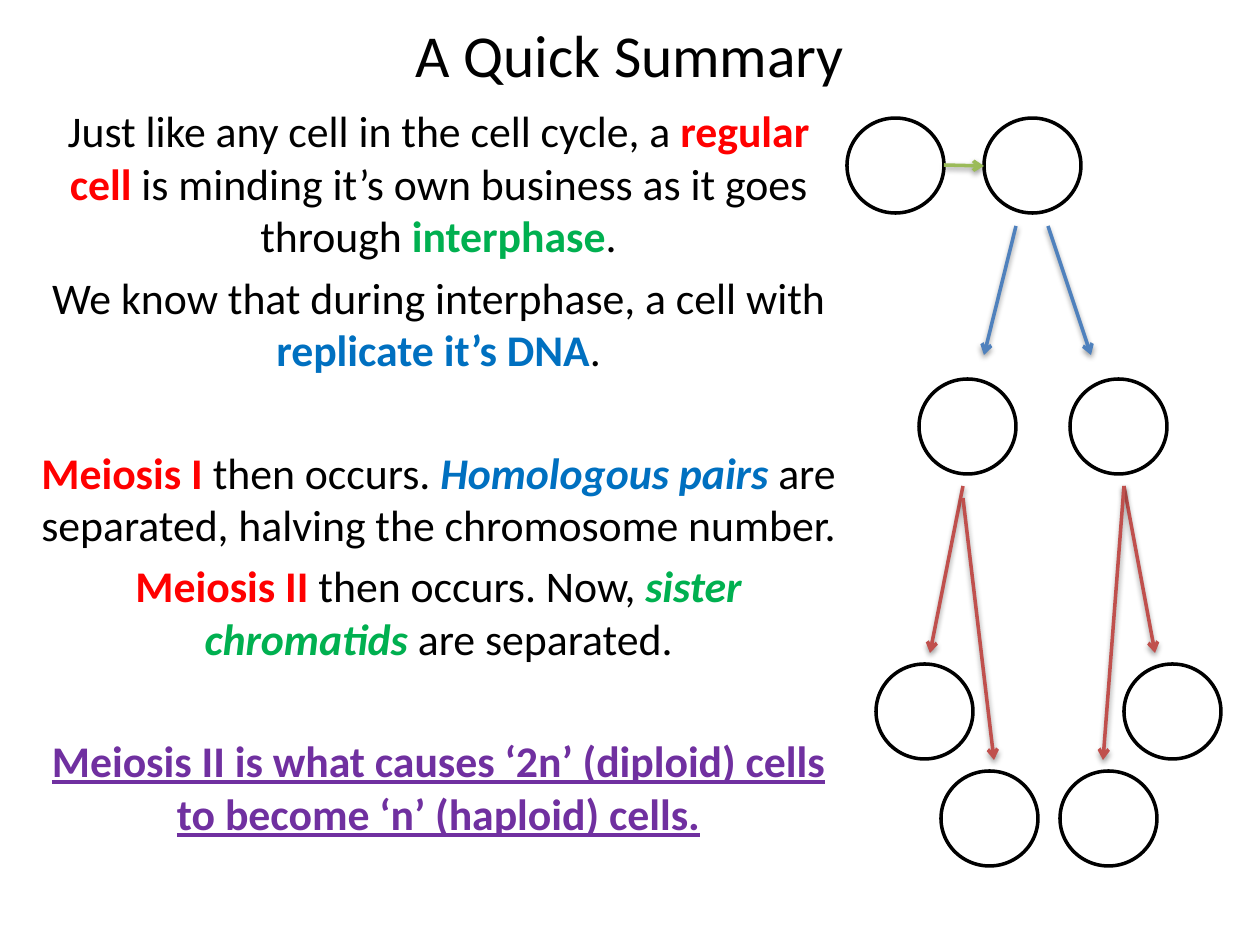
from lxml.etree import SubElement
from pptx import Presentation
from pptx.dml.color import RGBColor
from pptx.enum.shapes import MSO_CONNECTOR as CONN, MSO_SHAPE as SHAPE
from pptx.enum.text import MSO_ANCHOR as ANCHOR, PP_ALIGN as ALIGN
from pptx.oxml.ns import qn
from pptx.util import Emu, Pt

EMU_PER_PX = 914400 / 126
FONT = "Calibri"
BODY_SIZE = 25
LINE_WIDTH = Pt(2)

BLACK = RGBColor(0x00, 0x00, 0x00)
WHITE = RGBColor(0xFF, 0xFF, 0xFF)
RED = RGBColor(0xFF, 0x00, 0x00)
GREEN = RGBColor(0x00, 0xB0, 0x50)
BLUE = RGBColor(0x00, 0x70, 0xC0)
PURPLE = RGBColor(0x70, 0x30, 0xA0)
INTERPHASE = RGBColor(0x9B, 0xBB, 0x59)
MEIOSIS_1 = RGBColor(0x4F, 0x81, 0xBD)
MEIOSIS_2 = RGBColor(0xC0, 0x50, 0x4D)

PLAIN = {}
RED_BOLD = {"color": RED, "bold": True}
GREEN_BOLD = {"color": GREEN, "bold": True}
BLUE_BOLD = {"color": BLUE, "bold": True}
GREEN_ITALIC = {**GREEN_BOLD, "italic": True}
BLUE_ITALIC = {**BLUE_BOLD, "italic": True}
CONCLUSION = {"color": PURPLE, "bold": True, "underline": True}

# Each paragraph: space before in points, then its runs
TITLE = [(0, [("A Quick Summary", PLAIN)])]
BODY = [
    (0, [("Just like any cell in the cell cycle, a ", PLAIN),
         ("regular cell", RED_BOLD),
         (" is minding it’s own business as it goes through ", PLAIN),
         ("interphase", GREEN_BOLD), (".", PLAIN)]),
    (5, [("We know that during interphase, a cell with ", PLAIN),
         ("replicate it’s DNA", BLUE_BOLD), (".", PLAIN)]),
    (40, [("Meiosis I", RED_BOLD), (" then occurs. ", PLAIN),
          ("Homologous pairs ", BLUE_ITALIC),
          ("are separated, halving the chromosome number.", PLAIN)]),
    (5, [("Meiosis II ", RED_BOLD), ("then occurs. Now, ", PLAIN),
         ("sister chromatids ", GREEN_ITALIC), ("are separated.", PLAIN)]),
    (40, [("Meiosis II is what causes ‘2n’ (diploid) cells to become "
           "‘n’ (haploid) cells.", CONCLUSION)]),
]

# Cell rows: top, then the left edges
CELL_W, CELL_H = 97, 95
CELL_ROWS = [
    (118, (847, 984)),
    (379, (919, 1070)),
    (664, (876, 1124)),
    (771, (941, 1060)),
]

# Arrows: colour, then start and end points
ARROWS = [
    (INTERPHASE, (944, 165), (984, 166)),
    (MEIOSIS_1, (1016, 226), (984, 355)),
    (MEIOSIS_1, (1048, 226), (1091, 355)),
    (MEIOSIS_2, (963, 486), (930, 653)),
    (MEIOSIS_2, (1124, 486), (1155, 653)),
    (MEIOSIS_2, (963, 498), (994, 760)),
    (MEIOSIS_2, (1124, 486), (1103, 760)),
]


def px(*lengths):
    return [Emu(round(n * EMU_PER_PX)) for n in lengths]


def add_text(slide, box, paragraphs, size, anchor):
    tf = slide.shapes.add_textbox(*px(*box)).text_frame
    tf.word_wrap = True
    tf.vertical_anchor = anchor
    for i, (space, runs) in enumerate(paragraphs):
        p = tf.paragraphs[0] if i == 0 else tf.add_paragraph()
        p.alignment = ALIGN.CENTER
        p.space_before = Pt(space)
        for text, style in runs:
            r = p.add_run()
            r.text = text
            values = {"name": FONT, "size": Pt(size), **style}
            r.font.color.rgb = values.pop("color", BLACK)
            for name, value in values.items():
                setattr(r.font, name, value)


def add_cell(slide, left, top):
    sp = slide.shapes.add_shape(SHAPE.OVAL, *px(left, top, CELL_W, CELL_H))
    sp.shadow.inherit = False
    sp.fill.solid()
    sp.fill.fore_color.rgb = WHITE
    sp.line.color.rgb = BLACK
    sp.line.width = LINE_WIDTH


def add_arrow(slide, color, start, end):
    arrow = slide.shapes.add_connector(CONN.STRAIGHT, *px(*start, *end))
    arrow.line.color.rgb = color
    arrow.line.width = LINE_WIDTH
    sp_pr = arrow._element.spPr
    SubElement(sp_pr.find(qn("a:ln")), qn("a:tailEnd"), type="arrow")
    # Soft shadow straight below
    effects = SubElement(sp_pr, qn("a:effectLst"))
    shadow = SubElement(effects, qn("a:outerShdw"), blurRad="40000",
                        dist="20000", dir="5400000", rotWithShape="0")
    black = SubElement(shadow, qn("a:srgbClr"), val=str(BLACK))
    SubElement(black, qn("a:alpha"), val="38000")


def main():
    prs = Presentation()
    prs.slide_width, prs.slide_height = px(1260, 945)
    slide = prs.slides.add_slide(prs.slide_layouts[6])

    # Title and explanation
    add_text(slide, (63, 29, 1134, 49), TITLE, 34, ANCHOR.MIDDLE)
    add_text(slide, (20, 98, 837, 827), BODY, BODY_SIZE, ANCHOR.TOP)

    # Cell division diagram
    for top, lefts in CELL_ROWS:
        for left in lefts:
            add_cell(slide, left, top)
    for arrow in ARROWS:
        add_arrow(slide, *arrow)

    prs.save("out.pptx")


if __name__ == "__main__":
    main()
